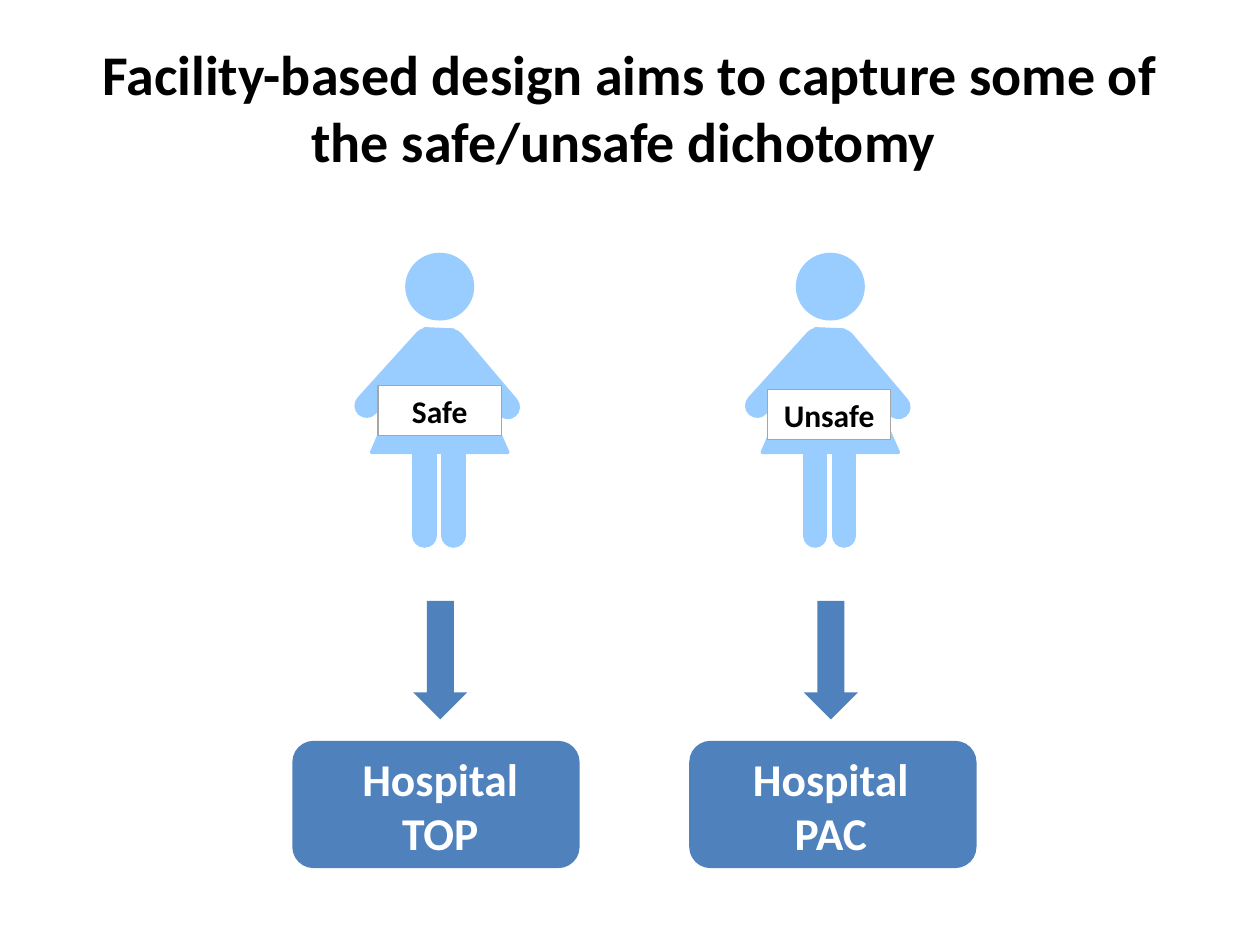
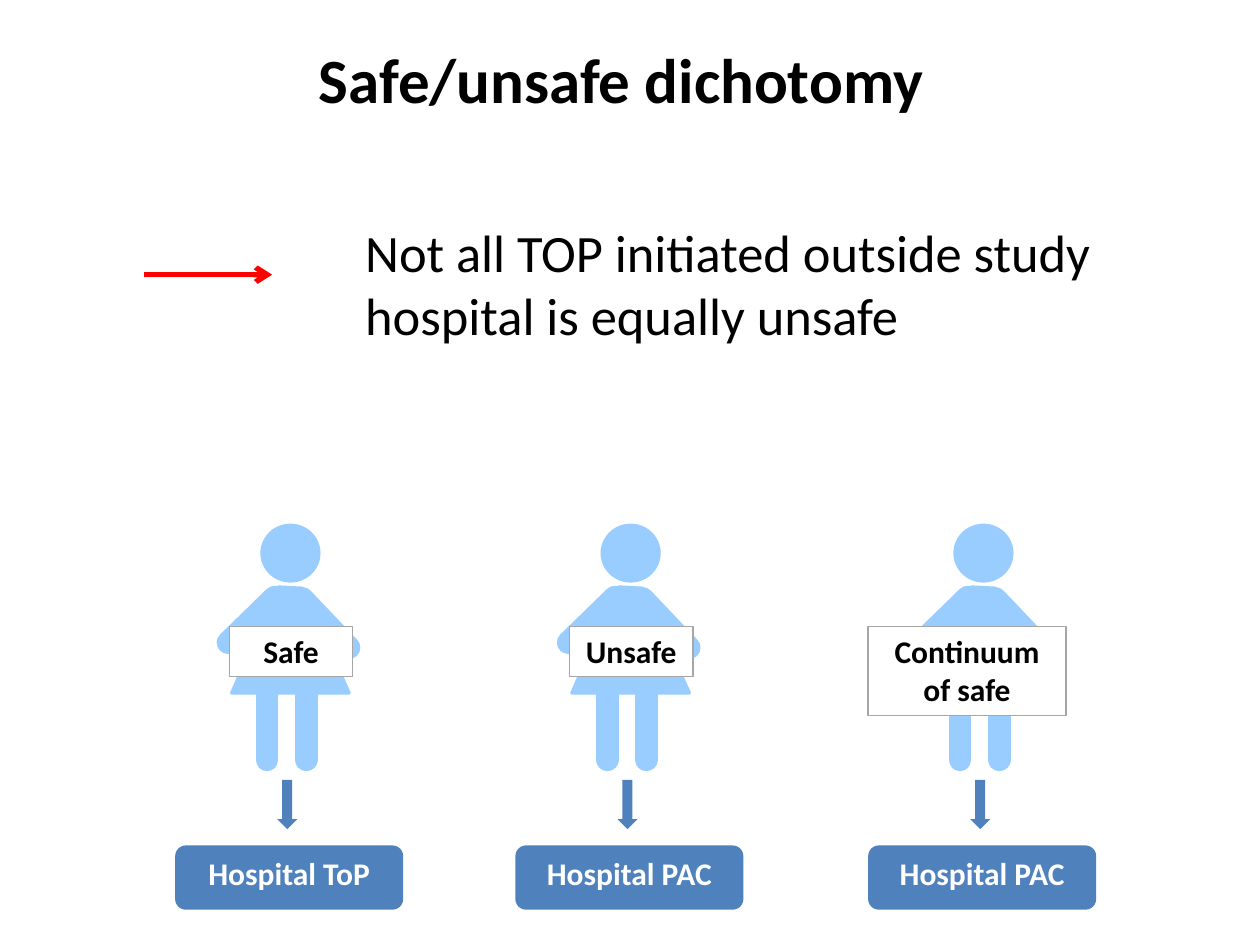
from dataclasses import dataclass

from lxml import etree
from pptx import Presentation
from pptx.dml.color import RGBColor
from pptx.enum.shapes import MSO_CONNECTOR, MSO_SHAPE
from pptx.enum.text import MSO_ANCHOR, PP_ALIGN
from pptx.oxml.ns import qn
from pptx.util import Inches, Pt

STRAIGHT = MSO_CONNECTOR.STRAIGHT
OVAL, RECT = MSO_SHAPE.OVAL, MSO_SHAPE.RECTANGLE
ROUNDED, DOWN_ARROW = MSO_SHAPE.ROUNDED_RECTANGLE, MSO_SHAPE.DOWN_ARROW
LEFT, CENTER = PP_ALIGN.LEFT, PP_ALIGN.CENTER
TOP, MIDDLE = MSO_ANCHOR.TOP, MSO_ANCHOR.MIDDLE
TITLE_ONLY = 5


@dataclass(frozen=True)
class Theme:
    """Colours, font and type sizes shared by the slides."""
    font: str = "Calibri"
    black: str = "000000"
    white: str = "FFFFFF"
    woman: str = "99CCFF"
    hospital: str = "4F81BD"
    tag_line: str = "A6A6A6"
    pointer: str = "FF0000"
    long_title: int = 32
    title: int = 36
    body: int = 30
    big_label: int = 26
    label: int = 18


@dataclass(frozen=True)
class Figure:
    """Parts of a woman's figure, in inches from its top left corner."""
    head: tuple
    limbs: tuple
    dress: tuple
    limb_width: int


THEME = Theme()
LARGE = Figure(
    head=(0.32, 0, 0.52, 0.51),
    limbs=((0.47, 0.68, 0, 1.2), (0.68, 0.69, 1.12, 1.21),
           (0.69, 1.46, 0.69, 2.23), (0.46, 1.46, 0.46, 2.23)),
    dress=((0.04, 1.57), (1.12, 1.57), (0.69, 0.6), (0.46, 0.59)),
    limb_width=14)
SMALL = Figure(
    head=(0.27, 0, 0.45, 0.44),
    limbs=((0.37, 0.57, 0, 0.93), (0.59, 0.58, 0.96, 0.97),
           (0.62, 1.3, 0.62, 1.86), (0.31, 1.29, 0.31, 1.86)),
    dress=((0.03, 1.33), (0.96, 1.33), (0.59, 0.5), (0.4, 0.49)),
    limb_width=13)


def rgb(color):
    """Turn a hex string into a colour."""
    return RGBColor.from_string(color)


def box_at(x, y, box):
    """Move a relative box to x, y and return its lengths."""
    left, top, width, height = box
    return [Inches(v) for v in (x + left, y + top, width, height)]


def paint(s, fill, line=None, width=0.75):
    """Give a shape a flat fill, an optional outline and no shadow."""
    s.shadow.inherit = False
    s.fill.solid()
    s.fill.fore_color.rgb = rgb(fill)
    if line:
        s.line.color.rgb = rgb(line)
        s.line.width = Pt(width)
    else:
        s.line.fill.background()
    return s


def write(s, text, size, color=THEME.black, bold=True, align=CENTER, anchor=TOP):
    """Set one formatted paragraph in a shape."""
    tf = s.text_frame
    tf.word_wrap = True
    tf.vertical_anchor = anchor
    p = tf.paragraphs[0]
    p.alignment = align
    r = p.add_run()
    r.text = text
    for name, value in {"name": THEME.font, "size": Pt(size), "bold": bold}.items():
        setattr(r.font, name, value)
    r.font.color.rgb = rgb(color)


def add_line(shapes, ends, color, width, rounded=False, arrow=False):
    """Draw a straight line between two points given in inches."""
    s = shapes.add_connector(STRAIGHT, *[Inches(v) for v in ends])
    s.line.color.rgb = rgb(color)
    s.line.width = Pt(width)
    ln = s.line._get_or_add_ln()
    if rounded:
        ln.set("cap", "rnd")
        etree.SubElement(ln, qn("a:round"))
    if arrow:
        etree.SubElement(ln, qn("a:tailEnd"), type="arrow")
    etree.SubElement(s._element.spPr, qn("a:effectLst"))


def add_title(slide, text, box, size):
    """Place and fill the title placeholder."""
    s = slide.shapes.title
    s.left, s.top, s.width, s.height = box_at(0, 0, box)
    write(s, text, size, anchor=MIDDLE)


def add_woman(slide, x, y, figure):
    """Draw a grouped figure with its top left corner at x, y."""
    shapes = slide.shapes.add_group_shape().shapes
    head = shapes.add_shape(OVAL, *box_at(x, y, figure.head))
    paint(head, THEME.woman, THEME.woman, 2)
    for x1, y1, x2, y2 in figure.limbs:
        add_line(shapes, (x + x1, y + y1, x + x2, y + y2),
                 THEME.woman, figure.limb_width, rounded=True)
    points = [(Inches(x + dx), Inches(y + dy)) for dx, dy in figure.dress]
    builder = shapes.build_freeform(*points[0])
    builder.add_line_segments(points[1:], close=True)
    dress = paint(builder.convert_to_shape(), THEME.woman, THEME.woman, 2)
    etree.SubElement(dress.line._get_or_add_ln(), qn("a:round"))


def add_pathway(slide, x, y, figure, tag, hospital, boxes, size, anchor):
    """Draw a tagged woman, an arrow and the hospital she reaches."""
    shapes = slide.shapes
    paint(shapes.add_shape(ROUNDED, *box_at(x, y, boxes["hospital"])), THEME.hospital)
    add_woman(slide, x, y, figure)
    s = shapes.add_textbox(*box_at(x, y, boxes["name"]))
    write(s, hospital, size, THEME.white, anchor=anchor)
    s = shapes.add_shape(RECT, *box_at(x, y, boxes["tag"]))
    write(paint(s, THEME.white, THEME.tag_line), tag, THEME.label)
    paint(shapes.add_shape(DOWN_ARROW, *box_at(x, y, boxes["arrow"])), THEME.hospital)


def build_design_slide(prs):
    """Build the slide with two large pathways."""
    slide = prs.slides.add_slide(prs.slide_layouts[TITLE_ONLY])
    add_title(slide, "Facility-based design aims to capture some of "
              "the safe/unsafe dichotomy ", (0.5, 0.22, 9, 1.25), THEME.long_title)
    boxes = {"name": (-0.4, 3.89, 1.97, 0.98), "arrow": (0.37, 2.75, 0.43, 0.94)}
    pathways = (
        (2.91, "Safe", "Hospital TOP", (0.09, 1.04, 0.98, 0.4), -0.59),
        (6.01, "Unsafe", "Hospital PAC", (0.08, 1.07, 0.98, 0.4), -0.54))
    for x, tag, hospital, tag_box, offset in pathways:
        own = {"tag": tag_box, "hospital": (offset, 3.86, 2.28, 1.01)}
        add_pathway(slide, x, 2.02, LARGE, tag, hospital, boxes | own,
                    THEME.big_label, TOP)


def build_dichotomy_slide(prs):
    """Build the slide with a statement and three small pathways."""
    slide = prs.slides.add_slide(prs.slide_layouts[TITLE_ONLY])
    add_title(slide, "Safe/unsafe dichotomy", (0.43, 0, 9, 1.25), THEME.title)
    s = slide.shapes.add_textbox(*box_at(0, 0, (2.8, 1.7, 6.93, 1.1)))
    write(s, "Not all TOP initiated outside study hospital is equally unsafe",
          THEME.body, bold=False, align=LEFT)
    add_line(slide.shapes, (1.14, 2.18, 2.16, 2.18), THEME.pointer, 3, arrow=True)
    boxes = {"hospital": (-0.42, 2.54, 1.81, 0.51), "name": (-0.42, 2.56, 1.81, 0.4),
             "arrow": (0.39, 2.02, 0.16, 0.39)}
    narrow, wide = (0.01, 0.8, 0.98, 0.4), (-0.42, 0.8, 1.57, 0.71)
    pathways = (
        (1.81, "Safe", "Hospital ToP", narrow),
        (4.51, "Unsafe", "Hospital PAC", narrow),
        (7.31, "Continuum of safe", "Hospital PAC", wide))
    for x, tag, hospital, tag_box in pathways:
        add_pathway(slide, x, 4.17, SMALL, tag, hospital, boxes | {"tag": tag_box},
                    THEME.label, MIDDLE)


def main():
    """Build and save the presentation."""
    prs = Presentation()
    prs.slide_width, prs.slide_height = Inches(10), Inches(7.5)
    build_design_slide(prs)
    build_dichotomy_slide(prs)
    prs.save("out.pptx")


if __name__ == "__main__":
    main()
